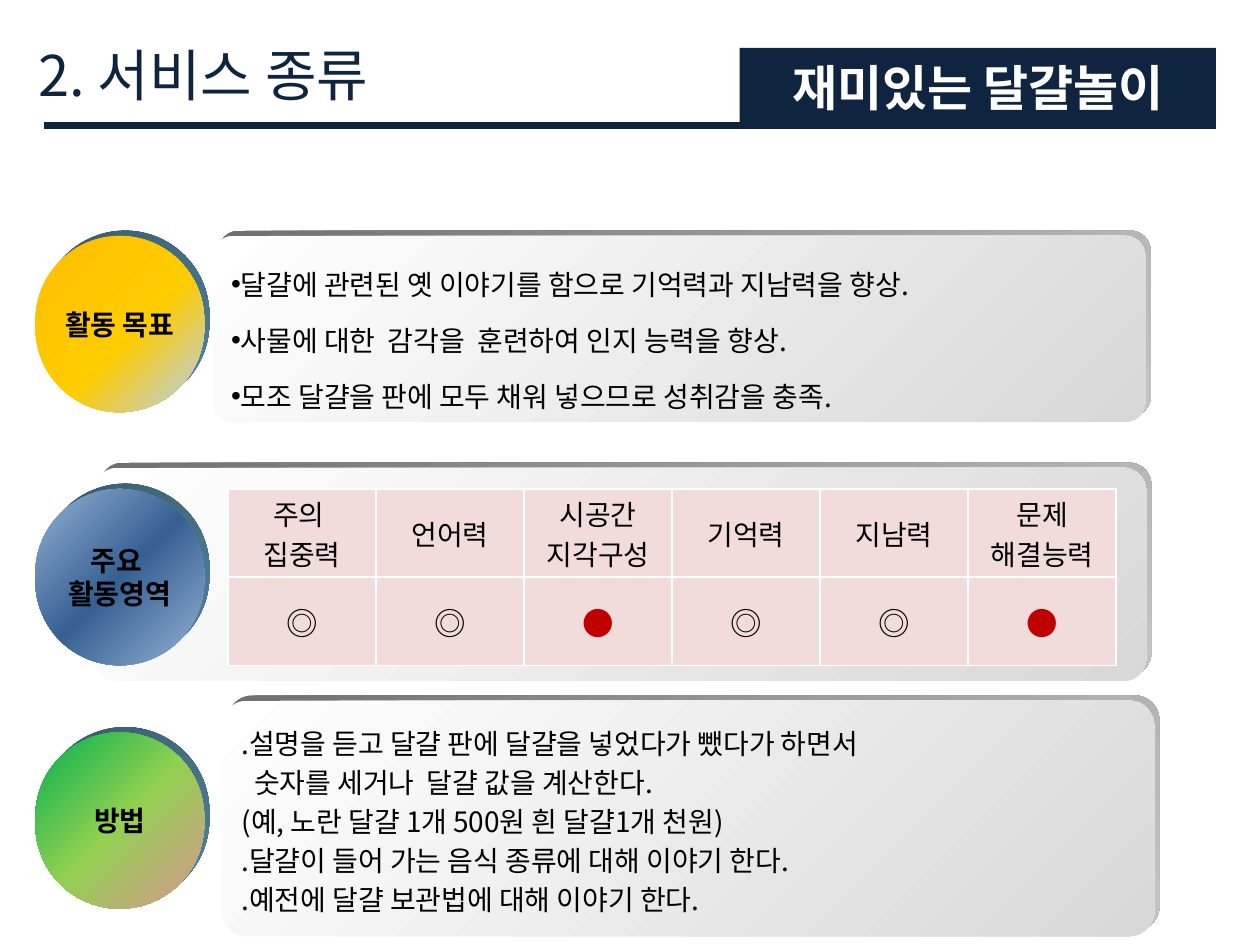
from lxml import etree
from pptx import Presentation
from pptx import util as u
from pptx.dml.color import RGBColor
from pptx.enum import shapes, text
from pptx.oxml import ns

NAVY = RGBColor(0x0F, 0x24, 0x3E)
BLACK = RGBColor(0, 0, 0)
WHITE = RGBColor(0xFF, 0xFF, 0xFF)
RED = RGBColor(0xC0, 0, 0)
PINK = RGBColor(0xF2, 0xDC, 0xDB)
LIGHT_GRAY = RGBColor(0xD8, 0xD8, 0xD8)
EDGE_DARK = RGBColor(0x70, 0x70, 0x70)
EDGE_LIGHT = RGBColor(0xC4, 0xC4, 0xC4)
RIM_DARK = RGBColor(0x38, 0x5A, 0x68)
RIM_LIGHT = RGBColor(0x50, 0x82, 0xA0)

PANEL_FILL = [(0, WHITE), (100, LIGHT_GRAY)]
PANEL_EDGE = [(0, EDGE_DARK), (100, EDGE_LIGHT)]
CIRCLE_RIM = [(0, RIM_DARK), (100, RIM_LIGHT)]
GOLD = [(7, RGBColor(0xFF, 0xC0, 0)), (57, RGBColor(0xFF, 0xCC, 0)),
        (97, RGBColor(0xB9, 0xCD, 0xE5))]
BLUE = [(0, RGBColor(0x95, 0xB3, 0xD7)), (50, RGBColor(0x37, 0x60, 0x92)),
        (100, RGBColor(0x95, 0xB3, 0xD7))]
GREEN = [(0, RGBColor(0, 0xB0, 0x50)), (50, RGBColor(0x92, 0xD0, 0x50)),
         (100, RGBColor(0xD9, 0x96, 0x94))]

KOREAN = "Noto Sans CJK KR"
LATIN = "Arial"
DEPTH = 3
CIRCLE_LEFT, CIRCLE_WIDTH, CIRCLE_HEIGHT = 20.2, 96.5, 100.8

GOALS = [
    "달걀에 관련된 옛 이야기를 함으로 기억력과 지남력을 향상.",
    "사물에 대한  감각을  훈련하여 인지 능력을 향상.",
    "모조 달걀을 판에 모두 채워 넣으므로 성취감을 충족.",
]
METHODS = [
    ".설명을 듣고 달걀 판에 달걀을 넣었다가 뺐다가 하면서",
    "  숫자를 세거나  달걀 값을 계산한다.",
    "(예, 노란 달걀 1개 500원 흰 달걀1개 천원)",
    ".달걀이 들어 가는 음식 종류에 대해 이야기 한다.",
    ".예전에 달걀 보관법에 대해 이야기 한다.",
]
AREAS = [
    ("주의 \n집중력", "◎"), ("언어력", "◎"), ("시공간\n지각구성", "●"),
    ("기억력", "◎"), ("지남력", "◎"), ("문제\n해결능력", "●"),
]


def child(parent, tag, **attributes):
    return etree.SubElement(parent, ns.qn(tag), attributes)


def write(frame, content, size=16, font=KOREAN, color=BLACK, bold=False,
          align=text.PP_ALIGN.LEFT, spacing=None, bullet=None):
    for index, line in enumerate(content.split("\n")):
        paragraph = frame.add_paragraph() if index else frame.paragraphs[0]
        paragraph.alignment = align
        if spacing:
            paragraph.line_spacing = u.Pt(spacing)
        if bullet:
            properties = paragraph._p.get_or_add_pPr()
            child(properties, "a:buFont", typeface=LATIN)
            child(properties, "a:buChar", char=bullet)
        run = paragraph.add_run()
        run.text = line
        run.font.size = u.Pt(size)
        run.font.bold = bold
        run.font.color.rgb = color
        run.font.name = font
        if font == KOREAN:
            child(run._r.get_or_add_rPr(), "a:ea", typeface=font)


class SlideBuilder:
    def __init__(self, slide):
        self.slide = slide

    def title(self, content, left, top, width, height):
        box = self.slide.shapes.add_textbox(*map(u.Pt, (left, top, width, height)))
        box.text_frame.word_wrap = True
        write(box.text_frame, content, size=32, color=NAVY)

    def rule(self, left, right, y):
        line = self.slide.shapes.add_connector(
            shapes.MSO_CONNECTOR.STRAIGHT, *map(u.Pt, (left, y, right, y)))
        line.line.color.rgb = NAVY
        line.line.width = u.Pt(4)
        child(line._element.spPr, "a:effectLst")

    def shape(self, kind, left, top, width, height):
        shape = self.slide.shapes.add_shape(
            kind, *map(u.Pt, (left, top, width, height)))
        shape.shadow.inherit = False
        shape.line.fill.background()
        shape.text_frame.vertical_anchor = text.MSO_ANCHOR.MIDDLE
        return shape

    def banner(self, content, left, top, width, height):
        shape = self.shape(shapes.MSO_SHAPE.RECTANGLE, left, top, width, height)
        shape.fill.solid()
        shape.fill.fore_color.rgb = NAVY
        write(shape.text_frame, content, size=28, color=WHITE, bold=True,
              align=text.PP_ALIGN.CENTER)

    def rounded(self, left, top, width, height, radius, stops):
        shape = self.shape(shapes.MSO_SHAPE.ROUNDED_RECTANGLE,
                           left, top, width, height)
        shape.adjustments[0] = radius
        shape.fill.gradient()
        shape.fill.gradient_angle = 315
        stop_list = shape._element.spPr.find(".//" + ns.qn("a:gsLst"))
        for stop in list(stop_list):
            stop_list.remove(stop)
        for position, color in stops:
            stop = child(stop_list, "a:gs", pos=str(position * 1000))
            child(stop, "a:srgbClr", val=str(color))
        return shape

    def raised(self, left, top, width, height, radius, stops, edge):
        self.rounded(left + DEPTH, top - DEPTH, width, height, radius, edge)
        return self.rounded(left, top, width, height, radius, stops)

    def panel(self, left, top, width, height, lines=(), **style):
        shape = self.raised(left, top, width, height, 0.107, PANEL_FILL, PANEL_EDGE)
        shape.text_frame.word_wrap = True
        if lines:
            write(shape.text_frame, "\n".join(lines), **style)

    def circle(self, content, top, stops):
        shape = self.raised(CIRCLE_LEFT, top, CIRCLE_WIDTH, CIRCLE_HEIGHT, 0.5,
                            stops, CIRCLE_RIM)
        shape.text_frame.word_wrap = False
        write(shape.text_frame, content, font=LATIN, bold=True, spacing=19,
              align=text.PP_ALIGN.CENTER)

    def table(self, columns, left, top, width, height):
        table = self.slide.shapes.add_table(
            2, len(columns), *map(u.Pt, (left, top, width, height))).table
        for index, (area, mark) in enumerate(columns):
            self.cell(table.cell(0, index), area, 16, BLACK)
            self.cell(table.cell(1, index), mark, 18, RED if mark == "●" else BLACK)

    def cell(self, cell, content, size, color):
        cell.margin_top = cell.margin_bottom = 0
        cell.vertical_anchor = text.MSO_ANCHOR.MIDDLE
        write(cell.text_frame, content, size=size, color=color,
              align=text.PP_ALIGN.CENTER)
        properties = cell._tc.get_or_add_tcPr()
        for side in ("a:lnL", "a:lnR", "a:lnT", "a:lnB"):
            border = child(properties, side, w=str(u.Pt(1)))
            child(child(border, "a:solidFill"), "a:srgbClr", val=str(WHITE))
        cell.fill.solid()
        cell.fill.fore_color.rgb = PINK


def main():
    presentation = Presentation()
    presentation.slide_width, presentation.slide_height = u.Pt(720), u.Pt(540)
    builder = SlideBuilder(
        presentation.slides.add_slide(presentation.slide_layouts[6]))
    builder.title("2. 서비스 종류", 15, 19.5, 223, 46)
    builder.rule(25.2, 694.8, 71.5)
    builder.panel(121.7, 134.8, 532.8, 106.3, GOALS, spacing=32, bullet="•")
    builder.circle("활동 목표", 134.8, GOLD)
    builder.panel(54, 267.3, 601, 121.7)
    builder.circle("주요 \n활동영역", 279.4, BLUE)
    builder.panel(126.8, 400.4, 532.8, 134.6, METHODS, spacing=22.3)
    builder.circle("방법", 418.5, GREEN)
    builder.table(AREAS, 130.3, 279.4, 507.6, 100.8)
    builder.banner("재미있는 달걀놀이", 422.6, 27.4, 272.2, 44)
    presentation.save("out.pptx")


if __name__ == "__main__":
    main()
